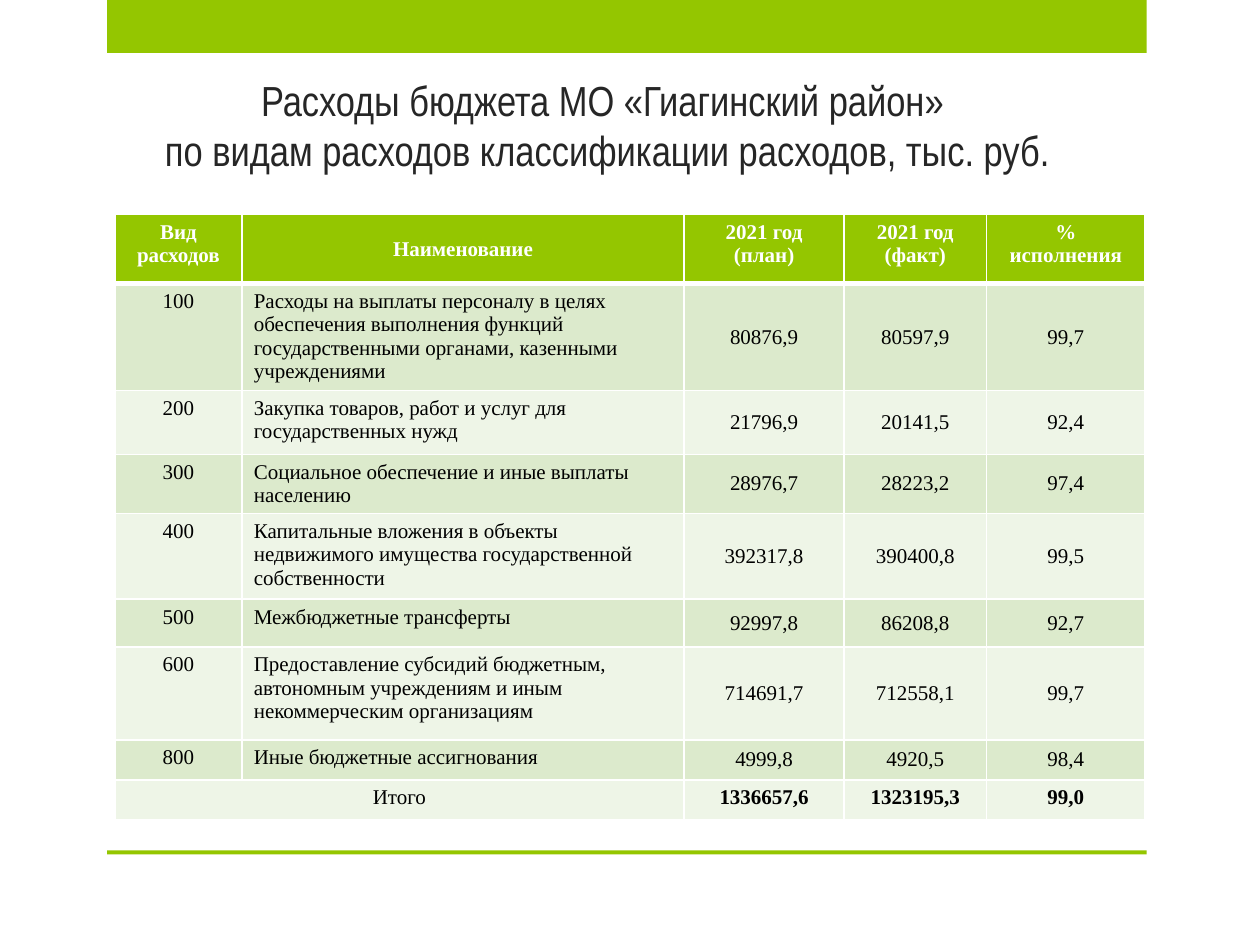
"""Build the slide with district budget spending by type of expenditure."""
from lxml.etree import SubElement
from pptx import Presentation
from pptx.dml.color import RGBColor
from pptx.enum.shapes import MSO_SHAPE
from pptx.enum.text import MSO_ANCHOR, MSO_AUTO_SIZE, PP_ALIGN
from pptx.oxml.ns import qn
from pptx.util import Pt

TITLE = ("Расходы бюджета МО «Гиагинский район» \v"
         "по видам расходов классификации расходов, тыс. руб.")
ROWS = [
    ("Вид расходов", "Наименование", "2021 год\n(план)", "2021 год (факт)", "% исполнения"),
    ("100", "Расходы на выплаты персоналу в целях обеспечения выполнения функций "
            "государственными органами, казенными учреждениями", "80876,9", "80597,9", "99,7"),
    ("200", "Закупка товаров, работ и услуг для государственных нужд",
     "21796,9", "20141,5", "92,4"),
    ("300", "Социальное обеспечение и иные выплаты населению", "28976,7", "28223,2", "97,4"),
    ("400", "Капитальные вложения в объекты недвижимого имущества государственной "
            "собственности", "392317,8", "390400,8", "99,5"),
    ("500", "Межбюджетные трансферты", "92997,8", "86208,8", "92,7"),
    ("600", "Предоставление субсидий бюджетным, автономным учреждениям и иным "
            "некоммерческим организациям", "714691,7", "712558,1", "99,7"),
    ("800", "Иные бюджетные ассигнования", "4999,8", "4920,5", "98,4"),
    ("Итого", "", "1336657,6", "1323195,3", "99,0"),
]
COL_WIDTHS = [72.7, 252.7, 91.4, 81.4, 90.7]
ROW_HEIGHTS = [39.4, 61.2, 36.4, 33.8, 49, 27.2, 53.2, 22.8, 22.8]
BARS = [(61.2, 0, 594, 30.2), (61.2, 486, 594, 2.2)]
COLORS = {"green": "94C600", "odd": "DCEACC", "even": "EEF5E7",
          "title": "262626", "text": "000000", "white": "FFFFFF"}
MARGINS = {"margin_left": Pt(6.8), "margin_right": Pt(6.8),
           "margin_top": Pt(3.6), "margin_bottom": Pt(3.6)}


def rgb(name):
    return RGBColor.from_string(COLORS[name])


def set_all(obj, values):
    for key, value in values.items():
        setattr(obj, key, value)


def format_text(tf, align, color, **font):
    for p in tf.paragraphs:
        p.alignment = align
        for r in p.runs:
            set_all(r.font, font)
            r.font.color.rgb = rgb(color)


def add_borders(cell, widths):
    tcPr = cell._tc.get_or_add_tcPr()
    for side, width in widths.items():
        ln = SubElement(tcPr, qn(f"a:ln{side}"), w=str(Pt(width)))
        fill = SubElement(ln, qn("a:solidFill"))
        SubElement(fill, qn("a:srgbClr"), val=COLORS["white"])


def format_cell(cell, row, col):
    header, total = row == 0, row == len(ROWS) - 1
    middle = col == 1 if header else col > 1 and not total
    add_borders(cell, {"L": 1, "R": 1, "T": 3 if row == 1 else 1, "B": 3 if header else 1})
    cell.fill.solid()
    cell.fill.fore_color.rgb = rgb("green" if header else "odd" if row % 2 else "even")
    set_all(cell, MARGINS)
    cell.vertical_anchor = MSO_ANCHOR.MIDDLE if middle else MSO_ANCHOR.TOP
    cell.text_frame.text = ROWS[row][col]
    align = PP_ALIGN.LEFT if col == 1 and not header else PP_ALIGN.CENTER
    format_text(cell.text_frame, align, "white" if header else "text",
                name="Times New Roman", size=Pt(12), bold=header or total and col > 1)


def main():
    prs = Presentation()
    set_all(prs, {"slide_width": Pt(720), "slide_height": Pt(540)})
    s = prs.slides.add_slide(prs.slide_layouts[5])

    for box in BARS:
        sp = s.shapes.add_shape(MSO_SHAPE.RECTANGLE, *map(Pt, box))
        sp.shadow.inherit = False
        sp.fill.solid()
        sp.fill.fore_color.rgb = rgb("green")
        sp.line.fill.background()

    title = s.shapes.title
    set_all(title, {"left": Pt(0), "top": Pt(37.4), "width": Pt(694), "height": Pt(66.2)})
    tf = title.text_frame
    tf.text = TITLE
    set_all(tf, {"word_wrap": True, "auto_size": MSO_AUTO_SIZE.NONE,
                 "vertical_anchor": MSO_ANCHOR.BOTTOM})
    format_text(tf, PP_ALIGN.CENTER, "title", name="Arial Narrow", size=Pt(24))

    table = s.shapes.add_table(len(ROWS), len(COL_WIDTHS), Pt(65.6), Pt(122.6),
                               Pt(sum(COL_WIDTHS)), Pt(sum(ROW_HEIGHTS))).table
    for column, width in zip(table.columns, COL_WIDTHS):
        column.width = Pt(width)
    for i, height in enumerate(ROW_HEIGHTS):
        table.rows[i].height = Pt(height)
        for j in range(len(COL_WIDTHS)):
            format_cell(table.cell(i, j), i, j)
    last = len(ROWS) - 1
    table.cell(last, 0).merge(table.cell(last, 1))

    prs.save("out.pptx")


if __name__ == "__main__":
    main()
